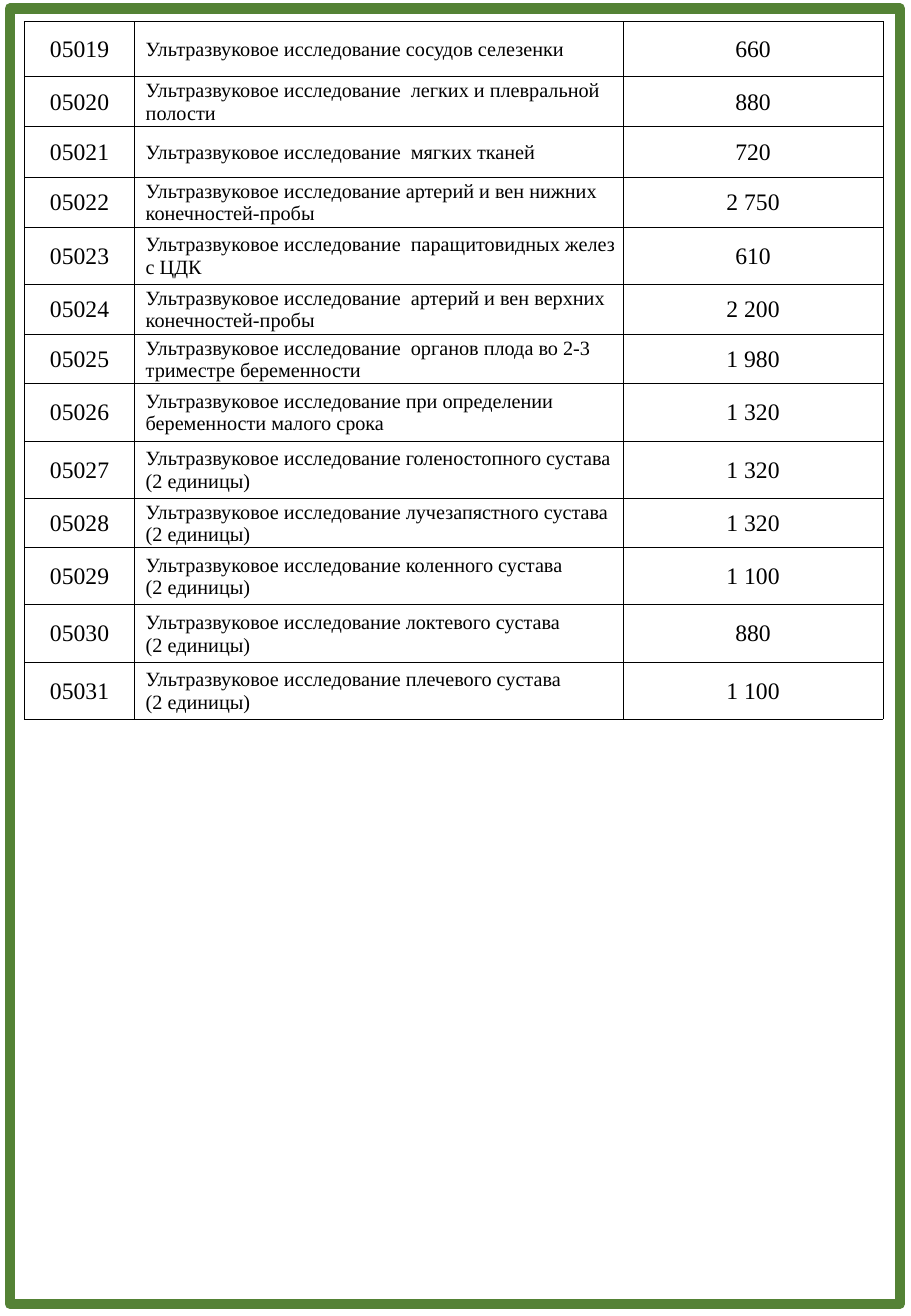
from lxml import etree
from pptx import Presentation
from pptx.dml.color import RGBColor
from pptx.enum.shapes import MSO_SHAPE
from pptx.enum.text import MSO_ANCHOR, PP_ALIGN
from pptx.oxml.ns import qn
from pptx.util import Inches, Pt

RECT = MSO_SHAPE.RECTANGLE
MIDDLE = MSO_ANCHOR.MIDDLE
LEFT, CENTER = PP_ALIGN.LEFT, PP_ALIGN.CENTER
GREEN = RGBColor(0x54, 0x82, 0x35)
BLACK = RGBColor(0, 0, 0)
FONT = "Times New Roman"

WIDTHS = [0.91, 4.02, 2.14]
# Row height, code, service, price
ROWS = [
    (0.45, "05019", "Ультразвуковое исследование сосудов селезенки", "660"),
    (0.41, "05020", "Ультразвуковое исследование  легких и плевральной полости", "880"),
    (0.42, "05021", "Ультразвуковое исследование  мягких тканей", "720"),
    (0.41, "05022", "Ультразвуковое исследование артерий и вен нижних конечностей-пробы", "2 750"),
    (0.47, "05023", "Ультразвуковое исследование  паращитовидных желез с ЦДК", "610"),
    (0.41, "05024", "Ультразвуковое исследование  артерий и вен верхних конечностей-пробы", "2 200"),
    (0.41, "05025", "Ультразвуковое исследование  органов плода во 2-3 триместре беременности", "1 980"),
    (0.47, "05026", "Ультразвуковое исследование при определении беременности малого срока", "1 320"),
    (0.47, "05027", "Ультразвуковое исследование голеностопного сустава (2 единицы)", "1 320"),
    (0.41, "05028", "Ультразвуковое исследование лучезапястного сустава (2 единицы)", "1 320"),
    (0.47, "05029", "Ультразвуковое исследование коленного сустава\n(2 единицы)", "1 100"),
    (0.47, "05030", "Ультразвуковое исследование локтевого сустава\n(2 единицы)", "880"),
    (0.47, "05031", "Ультразвуковое исследование плечевого сустава\n(2 единицы)", "1 100"),
]


def write(cell, text, size=14, align=CENTER, indent=0):
    cell.text = text
    cell.vertical_anchor = MIDDLE
    cell.margin_left = cell.margin_right = cell.margin_top = Inches(0.01)
    cell.margin_bottom = 0
    for para in cell.text_frame.paragraphs:
        para.alignment = align
        para._p.get_or_add_pPr().set("marL", str(Inches(indent)))
        for run in para.runs:
            run.font.name = FONT
            run.font.size = Pt(size)
            run.font.color.rgb = BLACK


def outline(cell):
    props = cell._tc.get_or_add_tcPr()
    for side in ("lnL", "lnR", "lnT", "lnB"):
        line = etree.SubElement(props, qn(f"a:{side}"), w=str(Pt(0.5)))
        fill = etree.SubElement(line, qn("a:solidFill"))
        etree.SubElement(fill, qn("a:srgbClr"), val=str(BLACK))


deck = Presentation()
deck.slide_width, deck.slide_height = Inches(7.5), Inches(10.83)
slide = deck.slides.add_slide(deck.slide_layouts[6])

frame = slide.shapes.add_shape(
    RECT, Inches(0.08), Inches(0.07), Inches(7.33), Inches(10.66))
frame.shadow.inherit = False
frame.fill.background()
frame.line.color.rgb = GREEN
frame.line.width = Pt(6)

height = sum(row[0] for row in ROWS)
table = slide.shapes.add_table(
    len(ROWS), len(WIDTHS), Inches(0.2), Inches(0.18),
    Inches(sum(WIDTHS)), Inches(height)).table
table.first_row = table.horz_banding = False
for col, width in zip(table.columns, WIDTHS):
    col.width = Inches(width)

for row, (tall, code, service, price) in zip(table.rows, ROWS):
    row.height = Inches(tall)
    write(row.cells[0], code)
    write(row.cells[1], service, size=12, align=LEFT, indent=0.08)
    write(row.cells[2], price)
    for cell in row.cells:
        outline(cell)
        cell.fill.background()

deck.save("out.pptx")
